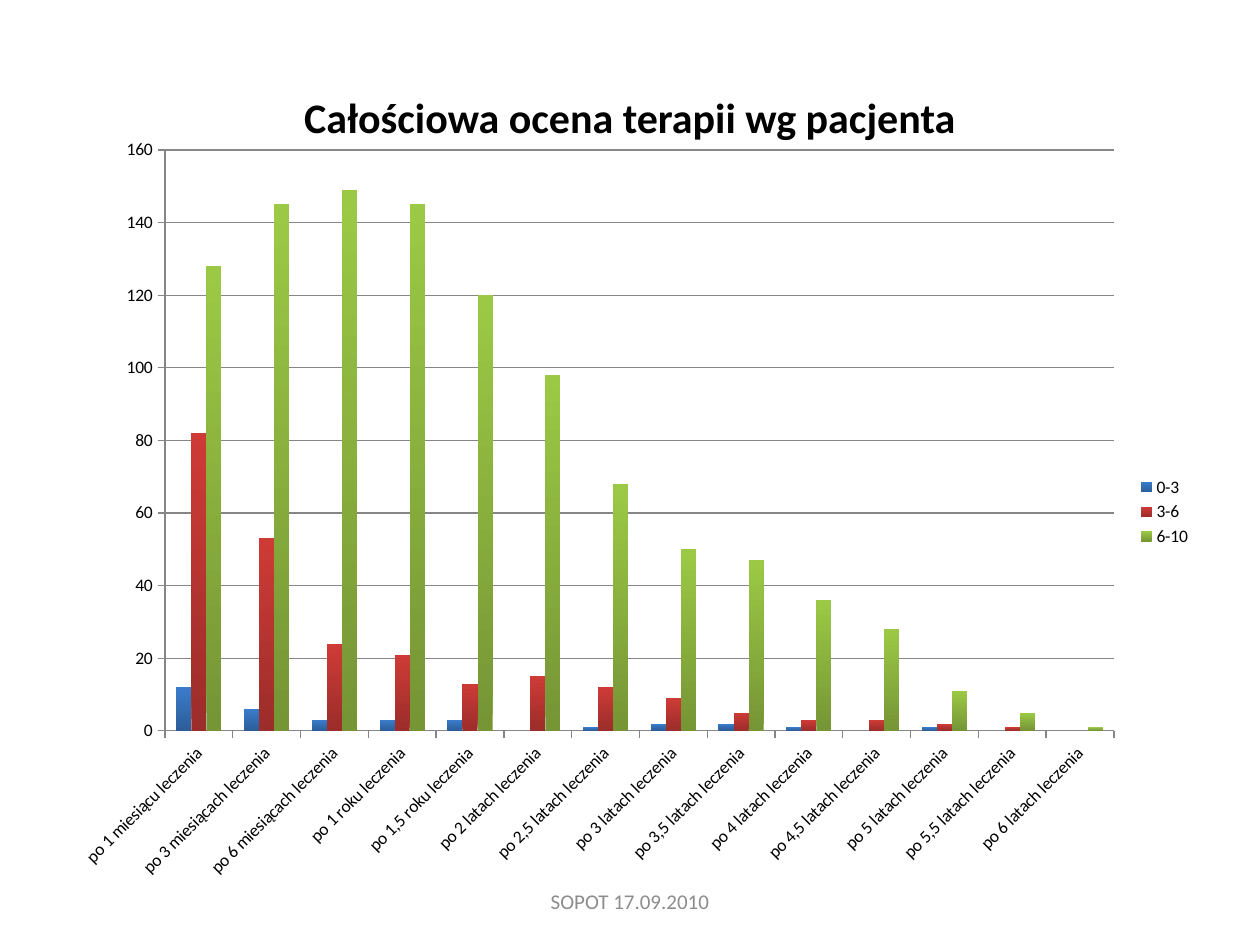
from typing import NamedTuple

from lxml.etree import SubElement
from pptx import Presentation
from pptx.chart.data import CategoryChartData
from pptx.dml.color import RGBColor
from pptx.enum.chart import XL_CHART_TYPE, XL_LEGEND_POSITION, XL_TICK_MARK
from pptx.enum.text import MSO_ANCHOR, PP_ALIGN
from pptx.oxml.ns import qn
from pptx.util import Emu, Pt

FONT = "Calibri"
BLACK = RGBColor(0x00, 0x00, 0x00)
FOOTER_GREY = RGBColor(0x8C, 0x8C, 0x8C)
AXIS_GREY = RGBColor(0x86, 0x86, 0x86)


class Box(NamedTuple):
    x: int
    y: int
    w: int
    h: int


class Label(NamedTuple):
    text: str
    box: Box
    size: int
    color: RGBColor
    bold: bool


class Rating(NamedTuple):
    name: str
    values: tuple
    bottom: RGBColor
    top: RGBColor


LABELS = (
    Label("Całościowa ocena terapii wg pacjenta", Box(63, 38, 1134, 157), 24, BLACK, True),
    Label("SOPOT 17.09.2010", Box(430, 876, 400, 50), 12, FOOTER_GREY, False),
)
CHART = Box(54, 125, 1150, 774)
PLOT = Box(165, 150, 949, 581)

PERIODS = ("1 miesiącu", "3 miesiącach", "6 miesiącach", "1 roku", "1,5 roku",
           "2 latach", "2,5 latach", "3 latach", "3,5 latach", "4 latach",
           "4,5 latach", "5 latach", "5,5 latach", "6 latach")
RATINGS = (
    Rating("0-3", (12, 6, 3, 3, 3, None, 1, 2, 2, 1, None, 1, None, None),
           RGBColor(0x2C, 0x5D, 0x98), RGBColor(0x3A, 0x7C, 0xCB)),
    Rating("3-6", (82, 53, 24, 21, 13, 15, 12, 9, 5, 3, 3, 2, 1, None),
           RGBColor(0x9B, 0x2D, 0x2A), RGBColor(0xCE, 0x3B, 0x37)),
    Rating("6-10", (128, 145, 149, 145, 120, 98, 68, 50, 47, 36, 28, 11, 5, 1),
           RGBColor(0x76, 0x95, 0x35), RGBColor(0x9B, 0xC9, 0x45)),
)


def px(n: int) -> Emu:
    return Emu(round(n * 914400 / 126))


def emu(box: Box) -> list:
    return [px(n) for n in box]


def add_label(s, label: Label) -> None:
    tf = s.shapes.add_textbox(*emu(label.box)).text_frame
    tf.word_wrap = True
    tf.vertical_anchor = MSO_ANCHOR.MIDDLE
    p = tf.paragraphs[0]
    p.alignment = PP_ALIGN.CENTER
    r = p.add_run()
    r.text = label.text
    r.font.name = FONT
    r.font.size = Pt(label.size)
    r.font.bold = label.bold
    r.font.color.rgb = label.color


def set_plot_layout(plot_area, plot: Box, chart: Box) -> None:
    for old in plot_area.findall(qn("c:layout")):
        plot_area.remove(old)
    layout = SubElement(plot_area, qn("c:layout"))
    plot_area.insert(0, layout)
    manual = SubElement(layout, qn("c:manualLayout"))
    settings = {
        "layoutTarget": "inner", "xMode": "edge", "yMode": "edge",
        "x": round((plot.x - chart.x) / chart.w, 4),
        "y": round((plot.y - chart.y) / chart.h, 4),
        "w": round(plot.w / chart.w, 4),
        "h": round(plot.h / chart.h, 4),
    }
    for tag, value in settings.items():
        SubElement(manual, qn(f"c:{tag}")).set("val", str(value))


def add_rating_chart(s) -> None:
    data = CategoryChartData()
    data.categories = [f"po {period} leczenia" for period in PERIODS]
    for rating in RATINGS:
        data.add_series(rating.name, rating.values)
    chart = s.shapes.add_chart(XL_CHART_TYPE.COLUMN_CLUSTERED, *emu(CHART), data).chart
    chart.has_title = False
    chart.font.name = FONT
    chart.font.size = Pt(10)
    chart.font.color.rgb = BLACK

    # Columns shaded from dark at the bottom to light at the top
    plot = chart.plots[0]
    plot.gap_width = 150
    plot.overlap = 0
    plot.vary_by_categories = False
    for series, rating in zip(plot.series, RATINGS):
        fill = series.format.fill
        fill.gradient()
        fill.gradient_angle = 90
        for stop, color in zip(fill.gradient_stops, (rating.bottom, rating.top)):
            stop.color.rgb = color

    # Axes and gridlines
    cat, val = chart.category_axis, chart.value_axis
    val.minimum_scale, val.maximum_scale, val.major_unit = 0, 160, 20
    val.has_major_gridlines = True
    cat.has_major_gridlines = False
    cat.major_tick_mark = val.major_tick_mark = XL_TICK_MARK.OUTSIDE
    for line in (cat.format.line, val.format.line, val.major_gridlines.format.line):
        line.color.rgb = AXIS_GREY
        line.width = Pt(0.75)

    # Slanted category labels and fixed plot area
    cat.tick_labels.font.size = Pt(10)
    plot_area = chart._chartSpace.find(f".//{qn('c:plotArea')}")
    body = plot_area.find(f"{qn('c:catAx')}/{qn('c:txPr')}/{qn('a:bodyPr')}")
    body.set("rot", str(-45 * 60000))
    set_plot_layout(plot_area, PLOT, CHART)

    # Legend
    chart.has_legend = True
    chart.legend.position = XL_LEGEND_POSITION.RIGHT
    chart.legend.include_in_layout = False


def main() -> None:
    prs = Presentation()
    prs.slide_width, prs.slide_height = px(1260), px(945)
    s = prs.slides.add_slide(prs.slide_layouts[6])
    title, footer = LABELS
    add_label(s, title)
    add_rating_chart(s)
    add_label(s, footer)
    prs.save("out.pptx")


if __name__ == "__main__":
    main()
